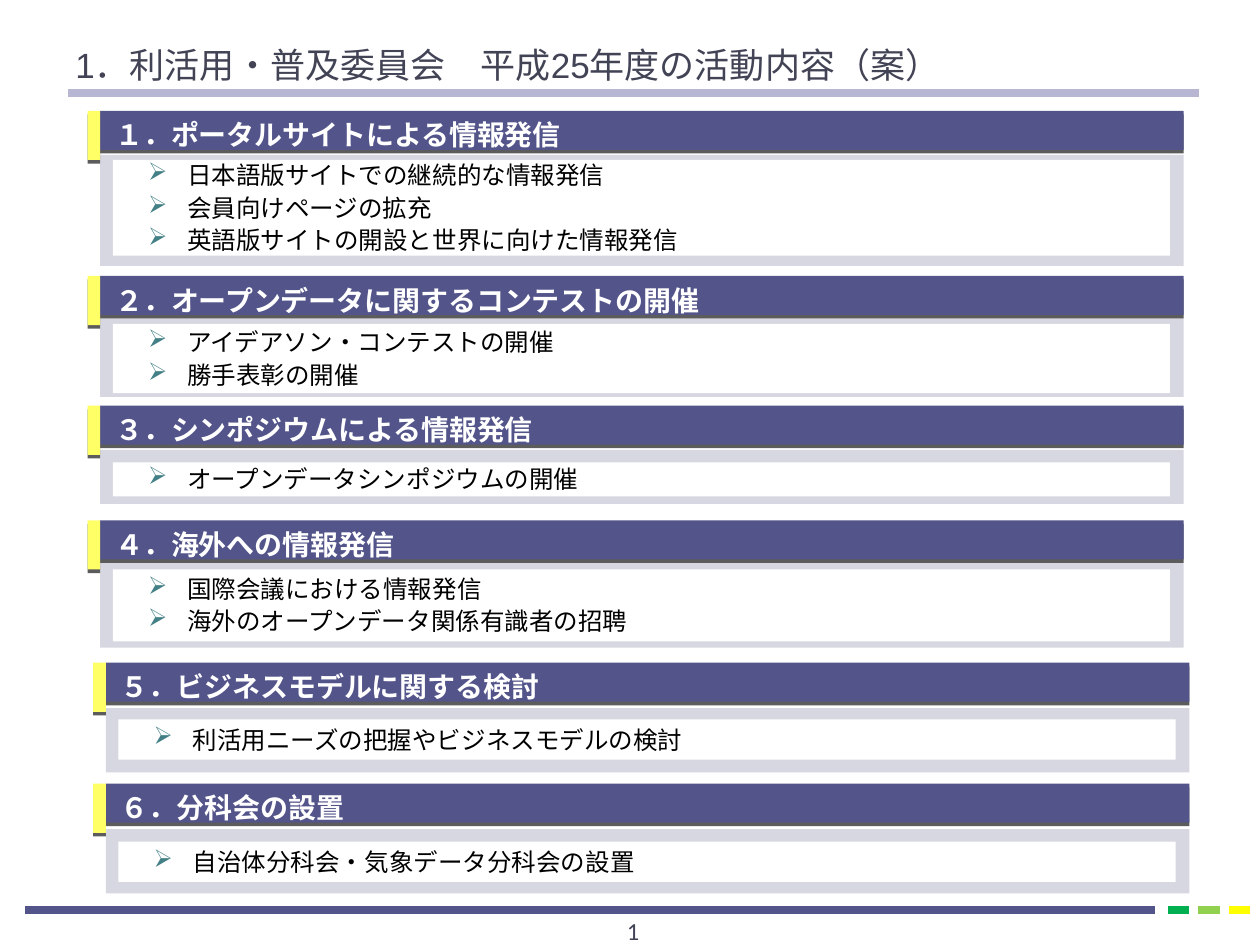
import dataclasses

import lxml.etree
import pptx
import pptx.dml.color
import pptx.enum.shapes
import pptx.enum.text
import pptx.oxml
import pptx.oxml.ns
import pptx.util

ANCHOR = pptx.enum.text.MSO_ANCHOR
ALIGN = pptx.enum.text.PP_ALIGN
CELL = 0.1


@dataclasses.dataclass(frozen=True)
class Theme:
    """Colours, fonts and type sizes."""
    navy: str = "53548A"
    rule: str = "B7B7D4"
    ink: str = "424456"
    panel: str = "D6D7E0"
    white: str = "FFFFFF"
    black: str = "000000"
    tab: str = "FFFF66"
    shade: str = "5C5C5C"
    bullet: str = "438086"
    dashes: tuple = ("00B050", "92D050", "FFFF00")
    sans: str = "Arial"
    head: str = "Noto Sans CJK JP"
    digit: str = "Calibri"
    title: int = 20
    topic: int = 16
    body: int = 14


THEME = Theme()

TOPICS = [
    (7.95, 8.8, 3.5, 8.8, 3.9, 7.6, "１．ポータルサイトによる情報発信",
     ["日本語版サイトでの継続的な情報発信", "会員向けページの拡充",
      "英語版サイトの開設と世界に向けた情報発信"]),
    (7.95, 21.9, 3.3, 6.3, 3.8, 5.5, "２．オープンデータに関するコンテストの開催",
     ["アイデアソン・コンテストの開催", "勝手表彰の開催"]),
    (7.95, 32.2, 3.5, 4.3, 4.5, 2.7, "３．シンポジウムによる情報発信",
     ["オープンデータシンポジウムの開催"]),
    (7.95, 41.3, 3.4, 6.7, 3.9, 5.7, "４．海外への情報発信",
     ["国際会議における情報発信", "海外のオープンデータ関係有識者の招聘"]),
    (8.4, 52.6, 3.6, 5.1, 4.5, 3.2, "５．ビジネスモデルに関する検討",
     ["利活用ニーズの把握やビジネスモデルの検討"]),
    (8.4, 62.2, 3.6, 5.1, 4.6, 3.2, "６．分科会の設置",
     ["自治体分科会・気象データ分科会の設置"]),
]


def cells(*counts):
    """Turn counts of grid cells into lengths."""
    return [pptx.util.Inches(n * CELL) for n in counts]


def tint(code):
    """Return a colour from its hex code."""
    return pptx.dml.color.RGBColor.from_string(code)


def node(tag, inner="", **attrs):
    """Build a drawing element from its tag, content and attributes."""
    pairs = " ".join(f'{key}="{val}"' for key, val in attrs.items())
    space = pptx.oxml.ns.nsdecls("a")
    return pptx.oxml.parse_xml(f"<a:{tag} {space} {pairs}>{inner}</a:{tag}>")


def write(shape, lines, size, color, font=THEME.sans, bold=False, bullet=False,
          align=ALIGN.LEFT, anchor=ANCHOR.TOP, pad=(1, 0.5, 1, 0.5), lead=1.0):
    """Put formatted lines of text in a shape."""
    frame = shape.text_frame
    frame.word_wrap = True
    frame.vertical_anchor = anchor
    (frame.margin_left, frame.margin_top,
     frame.margin_right, frame.margin_bottom) = cells(*pad)
    for num, line in enumerate(lines):
        para = frame.add_paragraph() if num else frame.paragraphs[0]
        para.alignment = align
        para.line_spacing = lead
        if bullet:
            props = para._p.get_or_add_pPr()
            indent = cells(3.1)[0]
            props.set("marL", str(indent))
            props.set("indent", str(-indent))
            props.append(node("buClr", f'<a:srgbClr val="{THEME.bullet}"/>'))
            props.append(node("buChar", char="➢"))
        run = para.add_run()
        run.text = line
        run.font.size = pptx.util.Pt(size)
        run.font.name = font
        run.font.bold = bold
        run.font.color.rgb = tint(color)
        run.font._element.append(node("ea", typeface=font))


def block(group, spot, fill, shade=False):
    """Add a plain filled box, with a drop edge if shaded."""
    kind = pptx.enum.shapes.MSO_SHAPE.RECTANGLE
    shape = group.shapes.add_shape(kind, *cells(*spot))
    shape.fill.solid()
    shape.fill.fore_color.rgb = tint(fill)
    shape.line.fill.background()
    shape.shadow.inherit = False
    if shade:
        drop = node("outerShdw", f'<a:srgbClr val="{THEME.shade}"/>',
                    dist=pptx.util.Pt(2), dir=90 * 60000, algn="ctr", rotWithShape=0)
        shape._element.spPr.find(pptx.oxml.ns.qn("a:effectLst")).append(drop)
    return shape


def rule(slide, left, right, row, color, width):
    """Draw a level line."""
    kind = pptx.enum.shapes.MSO_CONNECTOR.STRAIGHT
    line = slide.shapes.add_connector(kind, *cells(left, row, right, row))
    line.line.color.rgb = tint(color)
    line.line.width = pptx.util.Pt(width)
    line._element.spPr.append(node("effectLst"))


def topic(slide, left, top, drop, high, inset, tall, head, items):
    """Add one topic: panel, list, heading and tab."""
    group = slide.shapes.add_group_shape()
    block(group, (left, top + drop, 86, high), THEME.panel)
    panel = block(group, (left + 1, top + inset, 83.9, tall), THEME.white)
    write(panel, items, THEME.body, THEME.black, bullet=True, lead=1.1,
          anchor=ANCHOR.MIDDLE, pad=(2.8, 0, 2.8, 0.3))
    bar = block(group, (left, top, 86, 3.1), THEME.navy, shade=True)
    write(bar, [head], THEME.topic, THEME.white, font=THEME.head, bold=True,
          pad=(1.2, 0.3, 1.2, 0), lead=1.1)
    block(group, (left - 1, top, 1, 3.9), THEME.tab, shade=True)


def main():
    """Build and save the slide."""
    deck = pptx.Presentation()
    deck.slide_width, deck.slide_height = cells(100, 75)
    slide = deck.slides.add_slide(deck.slide_layouts[6])
    rule(slide, 2, 91.7, 72.2, THEME.navy, 4.5)
    for num, color in enumerate(THEME.dashes):
        left = 92.7 + 2.4 * num
        rule(slide, left, left + 1.7, 72.2, color, 4.5)
    rule(slide, 5.4, 95.2, 7.4, THEME.rule, 4.25)
    title = slide.shapes.add_textbox(*cells(5, 0.1, 90, 7.2))
    write(title, ["1．利活用・普及委員会　平成25年度の活動内容（案）"],
          THEME.title, THEME.ink, anchor=ANCHOR.BOTTOM)
    page = slide.shapes.add_textbox(*cells(39.4, 72.2, 21.7, 4))
    write(page, ["1"], THEME.body, THEME.ink, font=THEME.digit, align=ALIGN.CENTER)
    for entry in TOPICS:
        topic(slide, *entry)
    deck.save("out.pptx")


if __name__ == "__main__":
    main()
